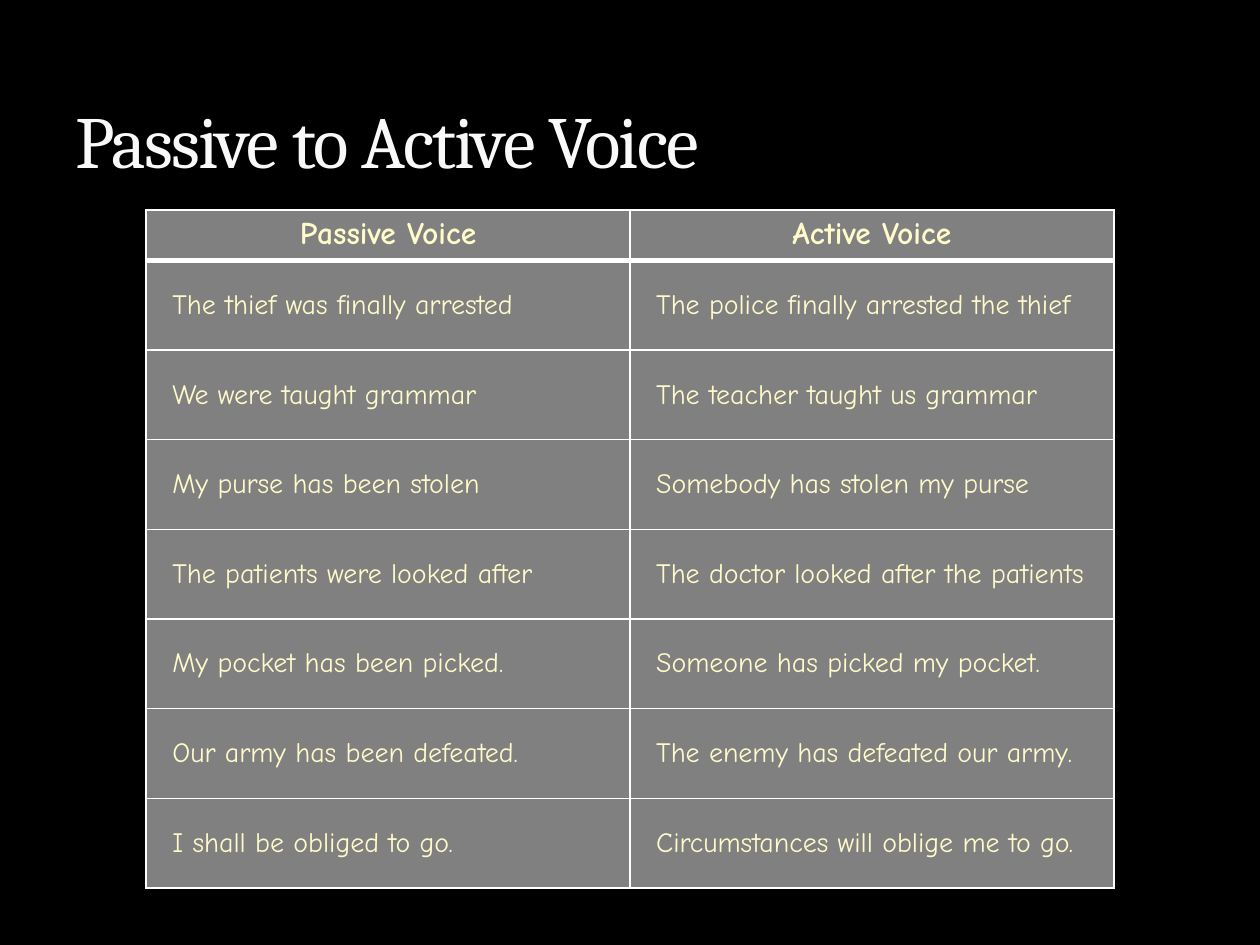
from lxml.etree import SubElement
from pptx import Presentation
from pptx.dml.color import RGBColor
from pptx.enum.text import MSO_ANCHOR, PP_ALIGN
from pptx.oxml.ns import qn
from pptx.util import Pt

SENTENCES = [
    ("The thief was finally arrested", "The police finally arrested the thief"),
    ("We were taught grammar", "The teacher taught us grammar"),
    ("My purse has been stolen", "Somebody has stolen my purse"),
    ("The patients were looked after", "The doctor looked after the patients"),
    ("My pocket has been picked.", "Someone has picked my pocket."),
    ("Our army has been defeated.", "The enemy has defeated our army."),
    ("I shall be obliged to go.", "Circumstances will oblige me to go."),
]


def color(hex_string):
    return RGBColor.from_string(hex_string)


def write(frame, text, *, font, size, fill, bold=False, align=PP_ALIGN.LEFT, spacing=None):
    """Fill a text frame with one formatted paragraph; spacing is in points."""
    paragraph = frame.paragraphs[0]
    paragraph.alignment = align
    run = paragraph.add_run()
    run.text = text
    run.font.name = font
    run.font.size = Pt(size)
    run.font.bold = bold
    run.font.color.rgb = color(fill)
    if spacing is not None:
        run.font._element.set("spc", str(round(spacing * 100)))


class SlideBuilder:
    background = "000000"
    title_color = "F9F9F9"
    title_font = "Cambria"
    table_font = "Comic Neue"
    table_text = "FEFAC9"
    cell_fill = "808080"
    border_color = "FFFFFF"

    def __init__(self, presentation):
        self.slide = presentation.slides.add_slide(presentation.slide_layouts[6])
        fill = self.slide.background.fill
        fill.solid()
        fill.fore_color.rgb = color(self.background)

    def title(self, text, left, top, width, height):
        box = self.slide.shapes.add_textbox(Pt(left), Pt(top), Pt(width), Pt(height))
        frame = box.text_frame
        frame.word_wrap = True
        frame.vertical_anchor = MSO_ANCHOR.BOTTOM
        write(frame, text, font=self.title_font, size=42, fill=self.title_color, spacing=-1)

    def borders(self, cell, top, bottom):
        """Draw all four cell edges; the side edges are one point wide."""
        properties = cell._tc.get_or_add_tcPr()
        edges = {"lnL": 1, "lnR": 1, "lnT": top, "lnB": bottom}
        for index, (edge, width) in enumerate(edges.items()):
            line = SubElement(properties, qn(f"a:{edge}"), w=str(Pt(width)))
            fill = SubElement(line, qn("a:solidFill"))
            SubElement(fill, qn("a:srgbClr"), val=self.border_color)
            properties.insert(index, line)

    def cell(self, cell, text, is_header, top, bottom):
        cell.fill.solid()
        cell.fill.fore_color.rgb = color(self.cell_fill)
        if not is_header:
            cell.vertical_anchor = MSO_ANCHOR.MIDDLE
            cell.margin_left = cell.margin_right = Pt(15)
            cell.margin_top = cell.margin_bottom = Pt(7.5)
        write(cell.text_frame, text, font=self.table_font, size=18 if is_header else 16,
              fill=self.table_text, bold=is_header,
              align=PP_ALIGN.CENTER if is_header else PP_ALIGN.LEFT)
        self.borders(cell, top, bottom)

    def table(self, header, body, left, top, width, header_height, row_height):
        rows = [header, *body]
        height = header_height + row_height * len(body)
        table = self.slide.shapes.add_table(
            len(rows), len(header), Pt(left), Pt(top), Pt(width), Pt(height)).table
        for column in table.columns:
            column.width = Pt(width / len(header))
        for row_index, texts in enumerate(rows):
            is_header = row_index == 0
            table.rows[row_index].height = Pt(header_height if is_header else row_height)
            for column_index, text in enumerate(texts):
                self.cell(table.cell(row_index, column_index), text, is_header,
                          top=3 if row_index == 1 else 1, bottom=3 if is_header else 1)


def main():
    presentation = Presentation()
    presentation.slide_width = Pt(720)
    presentation.slide_height = Pt(540)
    builder = SlideBuilder(presentation)
    builder.title("Passive to Active Voice", 36, 12, 648, 96)
    builder.table(("Passive Voice", "Active Voice"), SENTENCES,
                  left=83.5, top=120, width=553, header_height=28, row_height=51.25)
    presentation.save("out.pptx")


if __name__ == "__main__":
    main()
